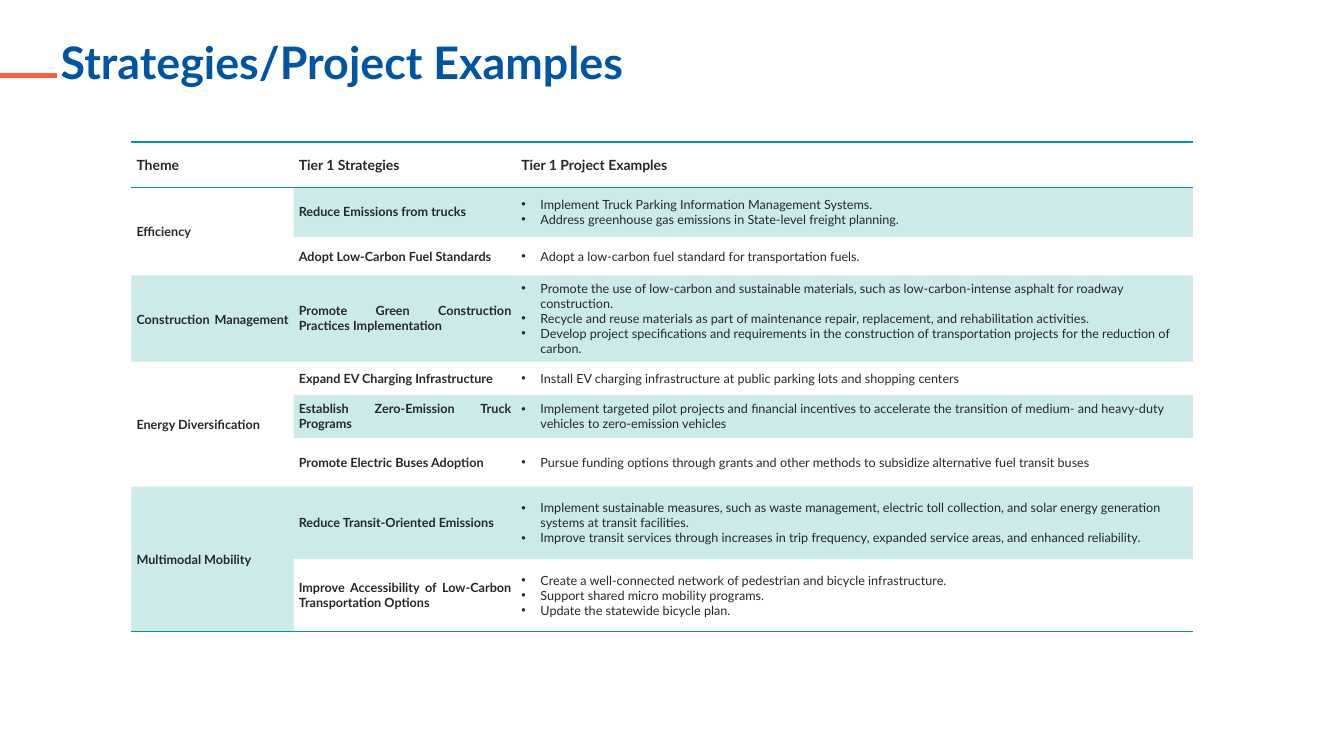
from dataclasses import dataclass

import lxml.etree
import pptx
import pptx.dml.color
import pptx.enum.shapes
import pptx.enum.text
import pptx.oxml.ns
import pptx.util

Cm = pptx.util.Cm
Pt = pptx.util.Pt
Align = pptx.enum.text.PP_ALIGN
Anchor = pptx.enum.text.MSO_ANCHOR


@dataclass(frozen=True)
class Theme:
    font: str = "Lato"
    title_color: str = "0054A4"
    accent: str = "FF6036"
    text: str = "25282A"
    teal: str = "009999"
    band_alpha: int = 20000
    title_size: int = 32
    header_size: int = 10
    body_size: int = 9
    accent_width: float = 3.5
    rule_width: float = 1
    cell_margin: float = 0.13
    bullet_indent: float = 0.48


THEME = Theme()
HEADERS = ["Theme", "Tier 1 Strategies", "Tier 1 Project Examples"]
COLUMN_WIDTHS = [4.09, 5.61, 17.05]
ROW_HEIGHTS = [1.14, 1.25, 0.97, 1.98, 0.84, 1.09, 1.22, 1.83, 1.83]
THEMES = [
    ("Efficiency", [
        ("Reduce Emissions from trucks", [
            "Implement Truck Parking Information Management Systems.",
            "Address greenhouse gas emissions in State-level freight planning."]),
        ("Adopt Low-Carbon Fuel Standards", [
            "Adopt a low-carbon fuel standard for transportation fuels."]),
    ]),
    ("Construction Management ", [
        ("Promote Green Construction Practices Implementation ", [
            "Promote the use of low-carbon and sustainable materials, such as "
            "low-carbon-intense asphalt for roadway construction.",
            "Recycle and reuse materials as part of maintenance repair, replacement, "
            "and rehabilitation activities.",
            "Develop project specifications and requirements in the construction of "
            "transportation projects for the reduction of carbon."]),
    ]),
    ("Energy Diversification", [
        ("Expand EV Charging Infrastructure ", [
            "Install EV charging infrastructure at public parking lots and shopping centers"]),
        ("Establish Zero-Emission Truck Programs", [
            "Implement targeted pilot projects and financial incentives to accelerate the "
            "transition of medium- and heavy-duty vehicles to zero-emission vehicles"]),
        ("Promote Electric Buses Adoption", [
            "Pursue funding options through grants and other methods to subsidize "
            "alternative fuel transit buses"]),
    ]),
    ("Multimodal Mobility", [
        ("Reduce Transit-Oriented Emissions", [
            "Implement sustainable measures, such as waste management, electric toll "
            "collection, and solar energy generation systems at transit facilities.",
            "Improve transit services through increases in trip frequency, expanded "
            "service areas, and enhanced reliability."]),
        ("Improve Accessibility of Low-Carbon Transportation Options", [
            "Create a well-connected network of pedestrian and bicycle infrastructure.",
            "Support shared micro mobility programs.",
            "Update the statewide bicycle plan."]),
    ]),
]
LABEL_FORMAT = {"line_spacing": 1.1, "space_after": Pt(6)}


def set_values(target, values):
    for name, value in values.items():
        setattr(target, name, value)


def rgb(color):
    return pptx.dml.color.RGBColor.from_string(color)


def add_element(parent, tag, **attributes):
    element = lxml.etree.SubElement(parent, pptx.oxml.ns.qn(tag))
    for name, value in attributes.items():
        element.set(name, str(value))
    return element


def style_font(paragraph, size, color, bold):
    set_values(paragraph.font, {"name": THEME.font, "size": Pt(size), "bold": bold})
    paragraph.font.color.rgb = rgb(color)


def add_bullet(paragraph):
    properties = paragraph._p.get_or_add_pPr()
    indent = Cm(THEME.bullet_indent)
    properties.set("marL", str(indent))
    properties.set("indent", str(-indent))
    add_element(properties, "a:buFont", typeface="Arial")
    add_element(properties, "a:buChar", char="•")


def write_cell(cell, lines, size, bold=True, bullets=False, paragraph_format=None):
    for index, line in enumerate(lines):
        frame = cell.text_frame
        paragraph = frame.add_paragraph() if index else frame.paragraphs[0]
        paragraph.add_run().text = line
        set_values(paragraph, paragraph_format or {})
        if bullets:
            add_bullet(paragraph)
        style_font(paragraph, size, THEME.text, bold)
        for run in paragraph.runs:
            set_values(run.font, {"name": THEME.font, "size": Pt(size), "bold": bold})
            run.font.color.rgb = rgb(THEME.text)


def shade_cell(cell):
    cell.fill.solid()
    cell.fill.fore_color.rgb = rgb(THEME.teal)
    color = cell._tc.tcPr.find(".//" + pptx.oxml.ns.qn("a:srgbClr"))
    add_element(color, "a:alpha", val=THEME.band_alpha)


def rule_cell(cell, sides):
    properties = cell._tc.get_or_add_tcPr()
    for position, side in enumerate(sides):
        line = add_element(properties, f"a:ln{side}", w=Pt(THEME.rule_width))
        add_element(add_element(line, "a:solidFill"), "a:srgbClr", val=THEME.teal)
        properties.insert(position, line)


def add_title(slide, left, top, width, height):
    accent_top = top + Cm(0.87)
    accent = slide.shapes.add_connector(
        pptx.enum.shapes.MSO_CONNECTOR.STRAIGHT,
        left - Cm(0.1), accent_top, 0, accent_top)
    accent.line.color.rgb = rgb(THEME.accent)
    accent.line.width = Pt(THEME.accent_width)
    add_element(accent._element.spPr, "a:effectLst")
    frame = slide.shapes.add_textbox(left, top, width, height).text_frame
    set_values(frame, {"word_wrap": True, "vertical_anchor": Anchor.TOP,
                       "margin_left": 0, "margin_right": 0,
                       "margin_top": 0, "margin_bottom": 0})
    paragraph = frame.paragraphs[0]
    paragraph.text = "Strategies/Project Examples"
    paragraph.line_spacing = 0.9
    style_font(paragraph, THEME.title_size, THEME.title_color, True)


def add_strategy_table(slide, left, top, width, height):
    table = slide.shapes.add_table(
        len(ROW_HEIGHTS), len(HEADERS), left, top, width, height).table
    set_values(table, {"first_row": False, "horz_banding": False})
    table._tbl.tblPr[0].text = "{2D5ABB26-0587-4C30-8999-92F81FD0307C}"
    for column, column_width in zip(table.columns, COLUMN_WIDTHS):
        column.width = Cm(column_width)
    for row, row_height in zip(table.rows, ROW_HEIGHTS):
        row.height = Cm(row_height)
    margin = Cm(THEME.cell_margin)
    for cell in table.iter_cells():
        set_values(cell, {"vertical_anchor": Anchor.MIDDLE,
                          "margin_left": margin, "margin_right": margin,
                          "margin_top": margin, "margin_bottom": margin})
        cell.fill.background()

    for column, header in enumerate(HEADERS):
        cell = table.cell(0, column)
        write_cell(cell, [header], THEME.header_size, paragraph_format=LABEL_FORMAT)
        rule_cell(cell, "TB")

    row = 1
    justified = {"alignment": Align.JUSTIFY}
    for theme_index, (theme_name, strategies) in enumerate(THEMES):
        theme_cell = table.cell(row, 0)
        if len(strategies) > 1:
            theme_cell.merge(table.cell(row + len(strategies) - 1, 0))
        write_cell(theme_cell, [theme_name], THEME.body_size,
                   paragraph_format=justified | LABEL_FORMAT)
        if theme_index % 2:
            shade_cell(theme_cell)
        for strategy, examples in strategies:
            strategy_cell, example_cell = table.cell(row, 1), table.cell(row, 2)
            write_cell(strategy_cell, [strategy], THEME.body_size,
                       paragraph_format=justified)
            write_cell(example_cell, examples, THEME.body_size, bold=False, bullets=True)
            if row % 2:
                shade_cell(strategy_cell)
                shade_cell(example_cell)
            row += 1
    for cell in [theme_cell, *table.rows[row - 1].cells]:
        rule_cell(cell, "B")


def main():
    presentation = pptx.Presentation()
    set_values(presentation, {"slide_width": Cm(33.87), "slide_height": Cm(19.05)})
    slide = presentation.slides.add_slide(presentation.slide_layouts[6])
    add_title(slide, Cm(1.53), Cm(1.04), Cm(30.48), Cm(2.34))
    add_strategy_table(slide, Cm(3.31), Cm(3.58),
                       Cm(sum(COLUMN_WIDTHS)), Cm(sum(ROW_HEIGHTS)))
    presentation.save("out.pptx")


if __name__ == "__main__":
    main()
